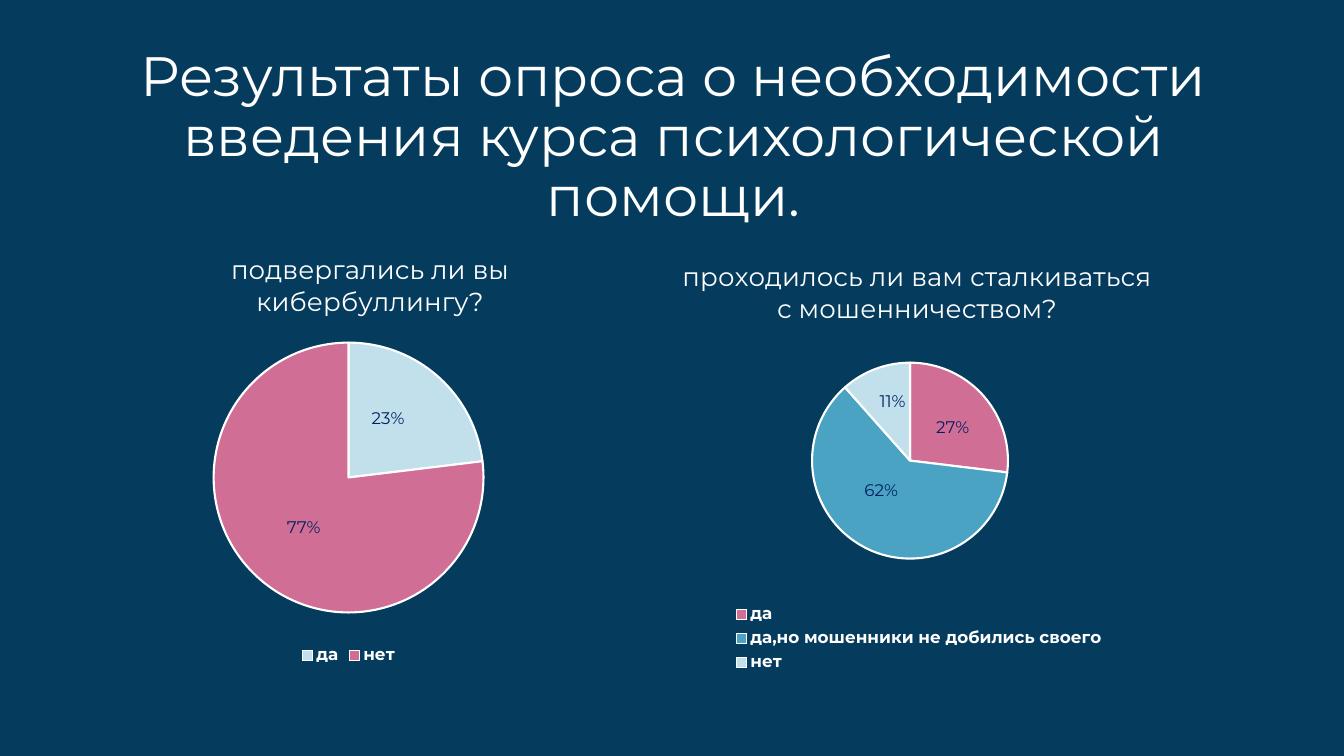
"""Builds a survey slide with a heading and two pie charts."""
import pptx
import pptx.chart.data
import pptx.dml.color
import pptx.enum.chart
import pptx.enum.text
import pptx.oxml
import pptx.oxml.ns
import pptx.util

Pt = pptx.util.Pt
RGBColor = pptx.dml.color.RGBColor

NAVY = RGBColor(0x05, 0x3C, 0x5E)
WHITE = RGBColor(0xFF, 0xFF, 0xFF)
LABEL_BLUE = RGBColor(0x00, 0x20, 0x60)
PALE_BLUE = RGBColor(0xC2, 0xE0, 0xEC)
TEAL = RGBColor(0x4B, 0xA3, 0xC3)
PINK = RGBColor(0xD0, 0x6E, 0x96)


class SurveySlide:
    """Holds the slide and its text style."""

    def __init__(self, presentation, font_name):
        self.font_name = font_name
        self.slide = presentation.slides.add_slide(presentation.slide_layouts[5])
        fill = self.slide.background.fill
        fill.solid()
        fill.fore_color.rgb = NAVY

    def style(self, font, size, color, bold=False):
        """Applies the slide font with a size and colour."""
        font.name = self.font_name
        font.size = Pt(size)
        font.bold = bold
        font.color.rgb = color

    def title(self, text, left, top, width, height):
        """Places and formats the title placeholder."""
        shape = self.slide.shapes.title
        shape.left, shape.top, shape.width, shape.height = map(Pt, (left, top, width, height))
        frame = shape.text_frame
        frame.text = text
        frame.word_wrap = True
        frame.auto_size = pptx.enum.text.MSO_AUTO_SIZE.NONE
        frame.vertical_anchor = pptx.enum.text.MSO_ANCHOR.MIDDLE
        paragraph = frame.paragraphs[0]
        paragraph.alignment = pptx.enum.text.PP_ALIGN.CENTER
        paragraph.line_spacing = 0.9
        self.style(paragraph.runs[0].font, 39.6, WHITE)

    def layout(self, parent, edge=True, **fractions):
        """Places a chart part by fractions of the chart area."""
        target = '<c:layoutTarget val="inner"/>' if "w" in fractions else ""
        modes = "".join(f'<c:{key}Mode val="edge"/>' for key in "xy") if edge else ""
        places = "".join(f'<c:{key} val="{value}"/>' for key, value in fractions.items())
        namespace = pptx.oxml.ns.nsdecls("c")
        layout = pptx.oxml.parse_xml(
            f"<c:layout {namespace}><c:manualLayout>{target}{modes}{places}"
            "</c:manualLayout></c:layout>")
        for old in parent.findall(pptx.oxml.ns.qn("c:layout")):
            parent.remove(old)
        leading = [parent.find(pptx.oxml.ns.qn(tag)) for tag in ("c:idx", "c:tx")]
        before = next((child for child in leading if child is not None), None)
        parent.insert(0 if before is None else 1, layout)

    def pie(self, question, slices, box, title_place, plot_place):
        """Adds a pie from (category, value, label, colour, label shift) slices."""
        data = pptx.chart.data.CategoryChartData()
        data.categories = [category for category, *_ in slices]
        data.add_series("Series 1", [value for _, value, *_ in slices])
        chart = self.slide.shapes.add_chart(
            pptx.enum.chart.XL_CHART_TYPE.PIE, *map(Pt, box), data).chart
        self.style(chart.font, 12, WHITE)

        chart.has_title = True
        frame = chart.chart_title.text_frame
        frame.text = question
        self.style(frame.paragraphs[0].runs[0].font, 18.6, WHITE)
        chart.chart_title.include_in_layout = False
        title_x, title_y = title_place
        self.layout(chart.chart_title._element, x=title_x, y=title_y)

        chart.has_legend = True
        chart.legend.position = pptx.enum.chart.XL_LEGEND_POSITION.BOTTOM
        chart.legend.include_in_layout = False
        self.style(chart.legend.font, 12, WHITE, bold=True)

        plot = chart.plots[0]
        plot.vary_by_categories = True
        x, y, width, height = plot_place
        self.layout(chart._chartSpace.chart.plotArea, x=x, y=y, w=width, h=height)
        series = plot.series[0]
        labels = series.data_labels
        labels.show_value = True
        labels.position = pptx.enum.chart.XL_LABEL_POSITION.BEST_FIT
        self.style(labels.font, 12, LABEL_BLUE)
        for index, (_, _, label, color, (shift_x, shift_y)) in enumerate(slices):
            point = series.points[index]
            point.format.fill.solid()
            point.format.fill.fore_color.rgb = color
            point.format.line.color.rgb = WHITE
            point.format.line.width = Pt(1.5)
            data_label = point.data_label
            data_label.text_frame.text = label
            run = data_label.text_frame.paragraphs[0].runs[0]
            self.style(run.font, 12, LABEL_BLUE)
            data_label.position = pptx.enum.chart.XL_LABEL_POSITION.CENTER
            element = labels._element.findall(pptx.oxml.ns.qn("c:dLbl"))[index]
            self.layout(element, edge=False, x=shift_x, y=shift_y)


def main():
    """Builds and saves the presentation."""
    presentation = pptx.Presentation()
    presentation.slide_width, presentation.slide_height = Pt(960), Pt(540)
    survey = SurveySlide(presentation, "Montserrat")
    survey.title("Результаты опроса о необходимости введения курса психологической помощи.",
                 67, 47, 828, 104)
    survey.pie("подвергались ли вы кибербуллингу?",
               [("да", 12, "23%", PALE_BLUE, (-0.01, -0.02)),
                ("нет", 40, "77%", PINK, (0, 0))],
               (67, 167, 364, 311), (0.26, 0.03), (0.23, 0.25, 0.54, 0.62))
    survey.pie("проходилось ли вам сталкиваться с мошенничеством?",
               [("да", 14, "27%", PINK, (0.01, 0)),
                ("да,но мошенники не добились своего", 32, "62%", TEAL, (-0.01, -0.03)),
                ("нет", 6, "11%", PALE_BLUE, (0, -0.03))],
               (441, 172, 431, 311), (0.1, 0.03), (0.32, 0.28, 0.33, 0.45))
    presentation.save("out.pptx")


if __name__ == "__main__":
    main()
